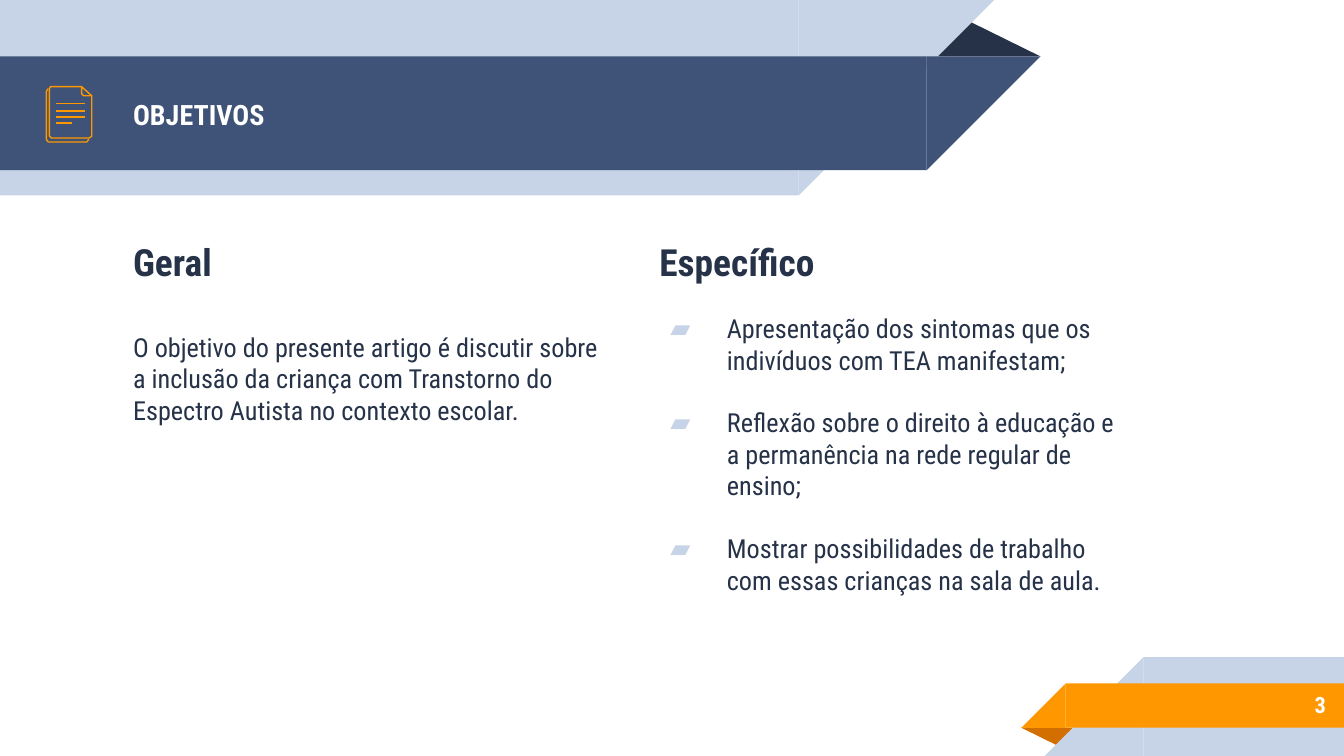
"""Build the OBJETIVOS slide on a grid of 1333 columns by 750 rows."""
from dataclasses import dataclass
from typing import Optional

from lxml.etree import SubElement
from pptx import Presentation
from pptx.dml.color import RGBColor
from pptx.enum.shapes import MSO_CONNECTOR, MSO_SHAPE as Preset
from pptx.enum.text import MSO_ANCHOR as Anchor, MSO_AUTO_SIZE, PP_ALIGN as Align
from pptx.oxml.ns import qn
from pptx.util import Inches, Pt

COLUMNS, ROWS = 1333, 750
CELL = Inches(0.01)


@dataclass(frozen=True)
class Theme:
    font: str = "Roboto Condensed"
    ink: str = "263248"
    navy: str = "3F5378"
    pale: str = "C7D3E6"
    orange: str = "FF9800"
    rust: str = "D26F00"
    white: str = "FFFFFF"
    heading: float = 26.7
    title: float = 20
    body: float = 18.7
    number: float = 16
    stroke: float = 0.96


THEME = Theme()


@dataclass(frozen=True)
class Band:
    """A bar that runs from a slide edge to a 45-degree tip."""
    top: int
    height: int
    length: int
    color: str
    from_right: bool = False


@dataclass(frozen=True)
class Fold:
    left: int
    top: int
    width: int
    height: int
    color: str
    rotation: int


@dataclass(frozen=True)
class Line:
    text: str
    size: float
    color: str = THEME.ink
    bold: bool = False
    before: float = 0
    align: Align = Align.LEFT
    bullet: Optional[str] = None


@dataclass(frozen=True)
class Column:
    left: int
    lines: tuple[Line, ...]


@dataclass(frozen=True)
class Stroke:
    points: tuple[tuple[int, int], ...]
    closed: bool = False


HEADER = (
    Fold(918, 18, 114, 38, THEME.ink, 0),
    Band(0, 194, 792, THEME.pale),
    Band(56, 113, 919, THEME.navy),
)
FOOTER = (
    Fold(1013, 722, 57, 19, THEME.rust, 180),
    Band(652, 98, 199, THEME.pale, from_right=True),
    Band(678, 44, 276, THEME.orange, from_right=True),
)


def heading(text: str) -> Line:
    return Line(text, THEME.heading, bold=True, before=8)


def goal(text: str, before: float = 22.4) -> Line:
    return Line(text, THEME.body, before=before, bullet="▰")


GOALS = (
    Column(119, (
        heading("Geral"),
        Line("O objetivo do presente artigo é discutir sobre a inclusão da criança com "
             "Transtorno do Espectro Autista no contexto escolar.", THEME.body, before=33.9),
    )),
    Column(641, (
        heading("Específico"),
        goal("Apresentação dos sintomas que os indivíduos com TEA manifestam;", before=20.6),
        goal("Reflexão sobre o direito à educação e a permanência na rede regular de ensino;"),
        goal("Mostrar possibilidades de trabalho com essas crianças na sala de aula."),
    )),
)

DOCUMENT = (
    Stroke(((88, 138), (87, 140), (86, 141), (48, 141), (47, 140), (46, 138),
            (46, 91), (47, 89), (48, 88))),
    Stroke(((91, 95), (91, 135), (90, 136), (88, 137), (51, 137), (50, 136), (49, 135),
            (49, 88), (50, 86), (51, 86), (81, 86))),
    Stroke(((81, 93), (81, 86), (91, 95), (83, 95), (82, 94)), closed=True),
)
WRITING = ((103, 84), (110, 84), (116, 84), (122, 71))
WRITING_LEFT = 56


def rgb(color: str) -> RGBColor:
    return RGBColor.from_string(color)


def draw_preset(slide, preset: Preset, left: int, top: int, width: int, height: int,
                color: str, rotation: int = 0):
    shape = slide.shapes.add_shape(preset, *(CELL * n for n in (left, top, width, height)))
    shape.shadow.inherit = False
    shape.fill.solid()
    shape.fill.fore_color.rgb = rgb(color)
    shape.line.fill.background()
    shape.rotation = rotation
    return shape


def draw_fold(slide, fold: Fold) -> None:
    flap = draw_preset(slide, Preset.ISOSCELES_TRIANGLE, fold.left, fold.top,
                       fold.width, fold.height, fold.color, fold.rotation)
    flap.adjustments[0] = 0.324


def draw_band(slide, band: Band) -> None:
    bar_left = COLUMNS - band.length if band.from_right else 0
    tip_left = bar_left - band.height if band.from_right else band.length
    draw_preset(slide, Preset.RECTANGLE, bar_left, band.top, band.length, band.height, band.color)
    draw_preset(slide, Preset.RIGHT_TRIANGLE, tip_left, band.top, band.height, band.height,
                band.color, 270 if band.from_right else 90)


def add_bullet(paragraph, mark: str) -> None:
    properties = paragraph._p.get_or_add_pPr()
    properties.set("marL", str(Inches(0.67)))
    properties.set("indent", str(Inches(-0.56)))
    tint = SubElement(properties, qn("a:buClr"))
    SubElement(tint, qn("a:srgbClr")).set("val", THEME.pale)
    SubElement(properties, qn("a:buFont")).set("typeface", THEME.font)
    SubElement(properties, qn("a:buChar")).set("char", mark)


def write(shape, lines: tuple[Line, ...], anchor: Anchor) -> None:
    frame = shape.text_frame
    frame.word_wrap = True
    frame.auto_size = MSO_AUTO_SIZE.NONE
    frame.vertical_anchor = anchor
    frame.margin_left = frame.margin_right = Inches(0.13)
    frame.margin_top = frame.margin_bottom = Inches(0.13)
    for index, line in enumerate(lines):
        paragraph = frame.add_paragraph() if index else frame.paragraphs[0]
        paragraph.text = line.text
        if line.bullet:
            add_bullet(paragraph, line.bullet)
        paragraph.alignment = line.align
        paragraph.space_before = Pt(line.before)
        font = paragraph.font
        font.name, font.size, font.bold = THEME.font, Pt(line.size), line.bold
        font.color.rgb = rgb(line.color)


def text_box(slide, left: int, top: int, width: int, height: int):
    return slide.shapes.add_textbox(*(CELL * n for n in (left, top, width, height)))


def ink_line(shape) -> None:
    shape.line.color.rgb = rgb(THEME.orange)
    shape.line.width = Pt(THEME.stroke)


def draw_document(slide) -> None:
    for stroke in DOCUMENT:
        builder = slide.shapes.build_freeform(*stroke.points[0], scale=CELL)
        builder.add_line_segments(stroke.points[1:], close=stroke.closed)
        sheet = builder.convert_to_shape()
        sheet.shadow.inherit = False
        sheet.fill.background()
        ink_line(sheet)
    for row, right in WRITING:
        rule = slide.shapes.add_connector(MSO_CONNECTOR.STRAIGHT, CELL * right, CELL * row,
                                          CELL * WRITING_LEFT, CELL * row)
        ink_line(rule)
        SubElement(rule._element.spPr, qn("a:effectLst"))


def main() -> None:
    deck = Presentation()
    deck.slide_width, deck.slide_height = CELL * COLUMNS, CELL * ROWS
    slide = deck.slides.add_slide(deck.slide_layouts[5])
    for part in HEADER + FOOTER:
        (draw_band if isinstance(part, Band) else draw_fold)(slide, part)

    title = slide.shapes.title
    title.left, title.top, title.width, title.height = (CELL * n for n in (119, 57, 767, 112))
    slide.shapes._spTree.append(title._element)
    write(title, (Line("OBJETIVOS", THEME.title, THEME.white, bold=True),), Anchor.MIDDLE)
    for column in GOALS:
        write(text_box(slide, column.left, 224, 493, 397), column.lines, Anchor.TOP)
    page = Line("3", THEME.number, THEME.white, bold=True, align=Align.RIGHT)
    write(text_box(slide, 1111, 676, 217, 46), (page,), Anchor.MIDDLE)
    draw_document(slide)
    deck.save("out.pptx")


if __name__ == "__main__":
    main()
